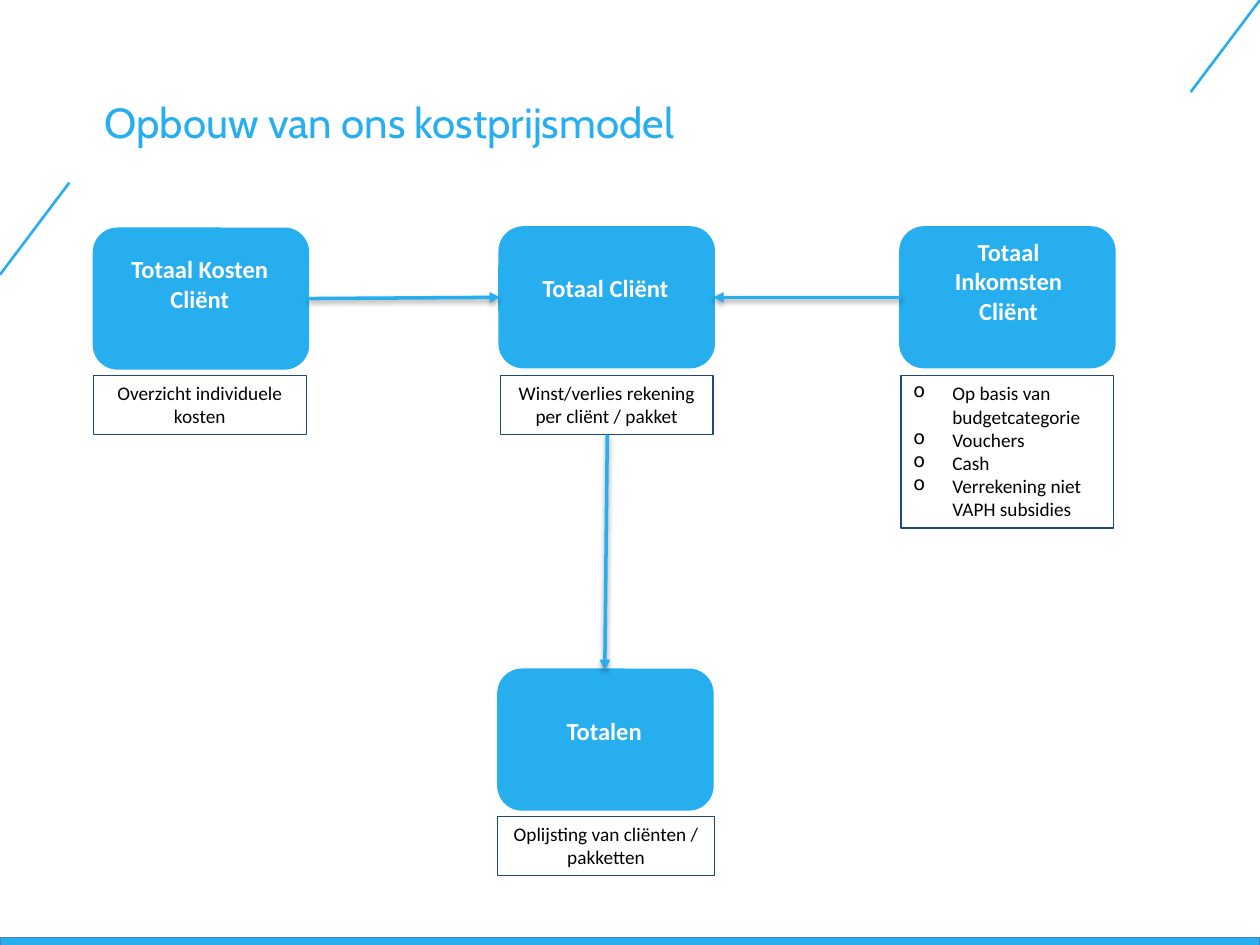
import pptx
import pptx.util
import pptx.dml.color
import pptx.enum.shapes
import pptx.enum.text
import pptx.oxml
import pptx.oxml.ns
from pptx.util import Inches, Pt

BLUE, NAVY, WHITE, BLACK = "27AEEF", "1F497D", "FFFFFF", "000000"
SHAPE = pptx.enum.shapes.MSO_SHAPE
ALIGN = pptx.enum.text.PP_ALIGN
BOX_W, BOX_H = 1.69, 1.1

TITLE = "Opbouw van ons kostprijsmodel"
TITLE_FONT = {"name": "Cabin", "size": Pt(24)}
LABEL_FONT = {"name": "Calibri", "size": Pt(14), "bold": True}
NOTE_FONT = {"name": "Calibri", "size": Pt(11)}

# Box corner, label text and place, note lines and place
BLOCKS = [
    ((7.15, 1.81), "Totaal Inkomsten Cliënt", (7.3, 1.83, 1.41, 0.81),
     ["Op basis van budgetcategorie", "Vouchers", "Cash",
      "Verrekening niet VAPH subsidies"], (7.15, 2.98, BOX_W, 1.21)),
    ((0.75, 1.82), "Totaal Kosten Cliënt", (0.74, 1.97, BOX_W, 0.57),
     ["Overzicht individuele kosten"], (0.74, 2.98, BOX_W, 0.47)),
    ((3.97, 1.81), "Totaal Cliënt", (3.96, 2.12, BOX_W, 0.34),
     ["Winst/verlies rekening per cliënt / pakket"], (3.97, 2.98, BOX_W, 0.47)),
    ((3.96, 5.32), "Totalen", (3.95, 5.63, BOX_W, 0.34),
     ["Oplijsting van cliënten / pakketten"], (3.95, 6.48, 1.72, 0.47)),
]
CORNER_LINES = [(0.55, 1.45, 0, 2.18), (10, 0, 9.45, 0.73)]
ARROWS = [(2.44, 2.37, 3.97, 2.36), (7.15, 2.36, 5.66, 2.36), (4.82, 3.45, 4.8, 5.32)]

NS = pptx.oxml.ns.nsdecls("a")
SHADOW = (f'<a:effectLst {NS}><a:outerShdw blurRad="40000" dist="20000" dir="5400000" '
          'rotWithShape="0"><a:srgbClr val="000000"><a:alpha val="38000"/></a:srgbClr>'
          '</a:outerShdw></a:effectLst>')


def rgb(value):
    return pptx.dml.color.RGBColor.from_string(value)


def add_box(kind, at, fill, line, width=0.75):
    sp = s.shapes.add_shape(kind, *map(Inches, at))
    sp.shadow.inherit = False
    if fill:
        sp.fill.solid()
        sp.fill.fore_color.rgb = rgb(fill)
    else:
        sp.fill.background()
    sp.line.color.rgb = rgb(line)
    sp.line.width = Pt(width)
    return sp


def write(sp, lines, font, color, align):
    tf = sp.text_frame
    tf.word_wrap = True
    tf.vertical_anchor = pptx.enum.text.MSO_ANCHOR.TOP
    for i, text in enumerate(lines):
        p = tf.paragraphs[0] if i == 0 else tf.add_paragraph()
        p.alignment = align
        if len(lines) > 1:
            pPr = p._p.get_or_add_pPr()
            pPr.set("marL", str(Inches(0.31)))
            pPr.set("indent", str(Inches(-0.31)))
            pPr.append(pptx.oxml.parse_xml(f'<a:buChar {NS} char="o"/>'))
        r = p.add_run()
        r.text = text
        for name, value in font.items():
            setattr(r.font, name, value)
        r.font.color.rgb = rgb(color)


def add_line(ends, width, arrow=False):
    c = s.shapes.add_connector(pptx.enum.shapes.MSO_CONNECTOR.STRAIGHT, *map(Inches, ends))
    c.line.color.rgb = rgb(BLUE)
    c.line.width = Pt(width)
    if arrow:
        c.line._get_or_add_ln().append(
            pptx.oxml.parse_xml(f'<a:tailEnd {NS} type="triangle"/>'))
    effects = SHADOW if arrow else f"<a:effectLst {NS}/>"
    c._element.spPr.append(pptx.oxml.parse_xml(effects))


prs = pptx.Presentation()
prs.slide_width, prs.slide_height = Inches(10), Inches(7.5)
s = prs.slides.add_slide(prs.slide_layouts[6])

# Page decoration and title
add_box(SHAPE.RECTANGLE, (0, 7.44, 10, 0.07), BLUE, "4B7EBC")
for ends in CORNER_LINES:
    add_line(ends, 1.5)
title = s.shapes.add_textbox(*map(Inches, (0.73, 0.72, 8.28, 0.63)))
write(title, [TITLE], TITLE_FONT, BLUE, ALIGN.LEFT)

# Blocks with their labels and notes
for corner, label, label_at, notes, notes_at in BLOCKS:
    add_box(SHAPE.ROUNDED_RECTANGLE, (*corner, BOX_W, BOX_H), BLUE, BLUE, 2)
    sp = add_box(SHAPE.RECTANGLE, label_at, BLUE, BLUE)
    write(sp, [label], LABEL_FONT, WHITE, ALIGN.CENTER)
    sp = add_box(SHAPE.RECTANGLE, notes_at, None, NAVY)
    write(sp, notes, NOTE_FONT, BLACK, ALIGN.LEFT if len(notes) > 1 else ALIGN.CENTER)

# Arrows between the blocks
for ends in ARROWS:
    add_line(ends, 2, arrow=True)

prs.save("out.pptx")
